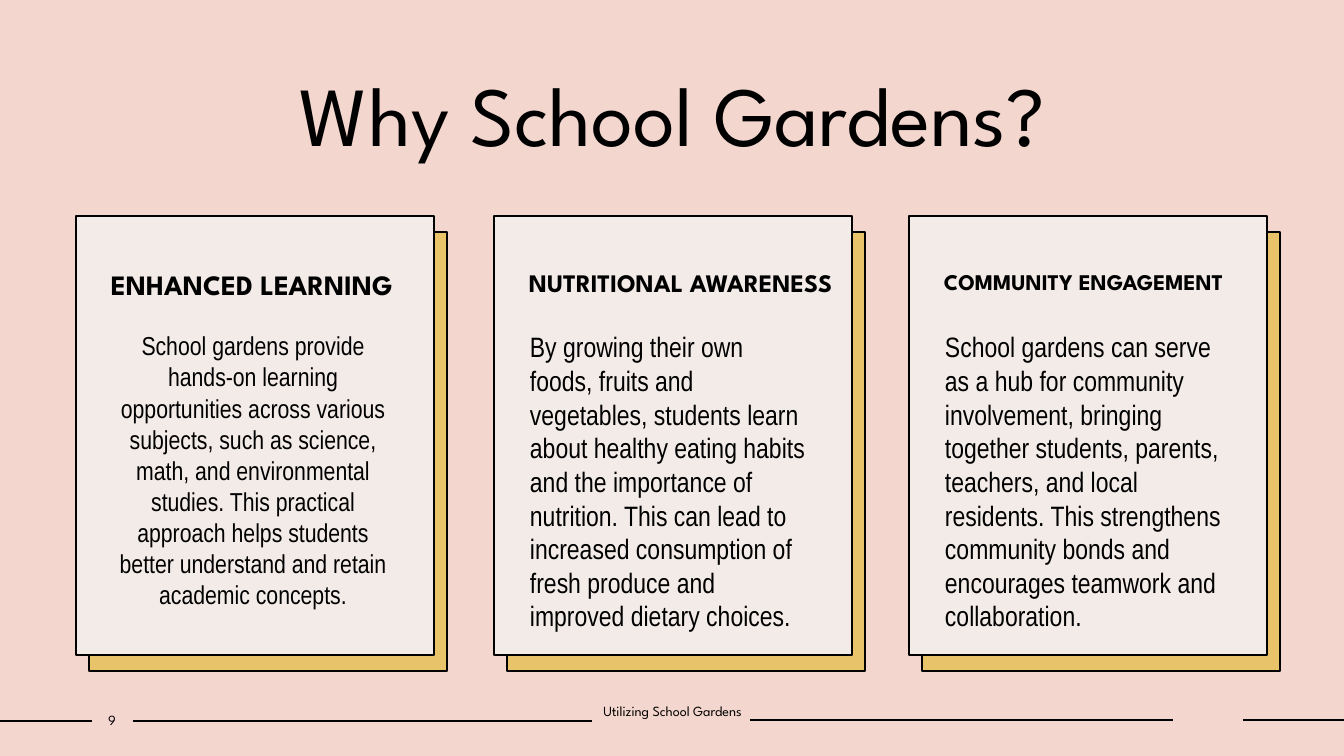
from dataclasses import dataclass

from lxml import etree
from pptx import Presentation
from pptx import util as u
from pptx.dml.color import RGBColor
from pptx.enum import shapes, text
from pptx.oxml.ns import qn

EMU_PER_PX = 12192000 / 1344
LEFT, CENTER = text.PP_ALIGN.LEFT, text.PP_ALIGN.CENTER
TOP, MIDDLE, BOTTOM = (
    text.MSO_ANCHOR.TOP, text.MSO_ANCHOR.MIDDLE, text.MSO_ANCHOR.BOTTOM)


@dataclass(frozen=True)
class Theme:
    background: str = "F3D6CD"
    panel: str = "F3EBE8"
    accent: str = "E9C369"
    ink: str = "000000"
    display_font: str = "League Spartan"
    body_font: str = "Arial Narrow"
    title_size: float = 60
    footer_size: float = 10
    heading_sizes: tuple[float, ...] = (20, 18, 16)
    body_small: float = 18.5
    body_size: float = 20
    border: float = 2
    rule: float = 1


THEME = Theme()


@dataclass(frozen=True)
class Area:
    left: int
    top: int
    width: int
    height: int


@dataclass(frozen=True)
class Insets:
    left: int = 10
    top: int = 5
    right: int = 10
    bottom: int = 5


@dataclass(frozen=True)
class TextStyle:
    font: str
    size: float
    align: text.PP_ALIGN = LEFT
    anchor: text.MSO_ANCHOR = TOP
    bold: bool = False
    line_spacing: float = 1.0
    insets: Insets = Insets()


@dataclass(frozen=True)
class Card:
    left: int
    heading: str
    heading_size: float
    body: str
    body_size: float
    body_align: text.PP_ALIGN


@dataclass(frozen=True)
class Rule:
    start: int
    end: int
    y: int


CARDS = (
    Card(76, "ENHANCED LEARNING", THEME.heading_sizes[0],
         "School gardens provide hands-on learning opportunities across various "
         "subjects, such as science, math, and environmental studies. This practical "
         "approach helps students better understand and retain academic concepts.",
         THEME.body_small, CENTER),
    Card(494, "NUTRITIONAL AWARENESS", THEME.heading_sizes[1],
         "By growing their own foods, fruits and vegetables, students learn about "
         "healthy eating habits and the importance of nutrition. This can lead to "
         "increased consumption of fresh produce and improved dietary choices.",
         THEME.body_size, LEFT),
    Card(909, "COMMUNITY ENGAGEMENT", THEME.heading_sizes[2],
         "School gardens can serve as a hub for community involvement, bringing "
         "together students, parents, teachers, and local residents. This strengthens "
         "community bonds and encourages teamwork and collaboration.",
         THEME.body_size, LEFT),
)
RULES = (Rule(0, 92, 721), Rule(133, 592, 721),
         Rule(750, 1173, 720), Rule(1243, 1344, 720))


def px(length: int) -> u.Emu:
    return u.Emu(round(length * EMU_PER_PX))


def bounds(area: Area) -> tuple[u.Emu, ...]:
    return px(area.left), px(area.top), px(area.width), px(area.height)


def color(code: str) -> RGBColor:
    return RGBColor.from_string(code)


def write(shape, content: str, style: TextStyle) -> None:
    frame = shape.text_frame
    frame.word_wrap = True
    frame.vertical_anchor = style.anchor
    frame.margin_left = px(style.insets.left)
    frame.margin_top = px(style.insets.top)
    frame.margin_right = px(style.insets.right)
    frame.margin_bottom = px(style.insets.bottom)
    para = frame.paragraphs[0]
    para.text = content
    para.alignment = style.align
    para.line_spacing = style.line_spacing
    para.font.name = style.font
    para.font.size = u.Pt(style.size)
    para.font.bold = style.bold
    para.font.color.rgb = color(THEME.ink)


def add_text(page, area: Area, content: str, style: TextStyle) -> None:
    write(page.shapes.add_textbox(*bounds(area)), content, style)


def add_panel(page, area: Area, fill: str):
    panel = page.shapes.add_shape(shapes.MSO_SHAPE.RECTANGLE, *bounds(area))
    panel.shadow.inherit = False
    panel.fill.solid()
    panel.fill.fore_color.rgb = color(fill)
    panel.line.color.rgb = color(THEME.ink)
    panel.line.width = u.Pt(THEME.border)
    return panel


def add_rule(page, rule: Rule) -> None:
    line = page.shapes.add_connector(
        shapes.MSO_CONNECTOR.STRAIGHT,
        px(rule.start), px(rule.y), px(rule.end), px(rule.y))
    line.line.color.rgb = color(THEME.ink)
    line.line.width = u.Pt(THEME.rule)
    etree.SubElement(line._element.spPr, qn("a:effectLst"))


def add_card(page, card: Card) -> None:
    add_panel(page, Area(card.left + 13, 232, 358, 439), THEME.accent)
    front = add_panel(page, Area(card.left, 216, 358, 439), THEME.panel)
    write(front, card.heading, TextStyle(
        THEME.display_font, card.heading_size, bold=True, line_spacing=0.9,
        insets=Insets(left=35, top=55)))
    add_text(page, Area(card.left + 26, 325, 302, 307), card.body, TextStyle(
        THEME.body_font, card.body_size, card.body_align))


def main() -> None:
    deck = Presentation()
    deck.slide_width, deck.slide_height = px(1344), px(756)
    page = deck.slides.add_slide(deck.slide_layouts[6])
    page.background.fill.solid()
    page.background.fill.fore_color.rgb = color(THEME.background)

    for rule in RULES:
        add_rule(page, rule)
    add_text(page, Area(126, 56, 1093, 112), "Why School Gardens?", TextStyle(
        THEME.display_font, THEME.title_size, CENTER, BOTTOM))
    for card in CARDS:
        add_card(page, card)

    footer = TextStyle(THEME.display_font, THEME.footer_size, CENTER, MIDDLE,
                       insets=Insets(left=0, right=0))
    add_text(page, Area(92, 706, 40, 27), "9", footer)
    add_text(page, Area(592, 697, 161, 27), "Utilizing School Gardens", footer)
    deck.save("out.pptx")


if __name__ == "__main__":
    main()
